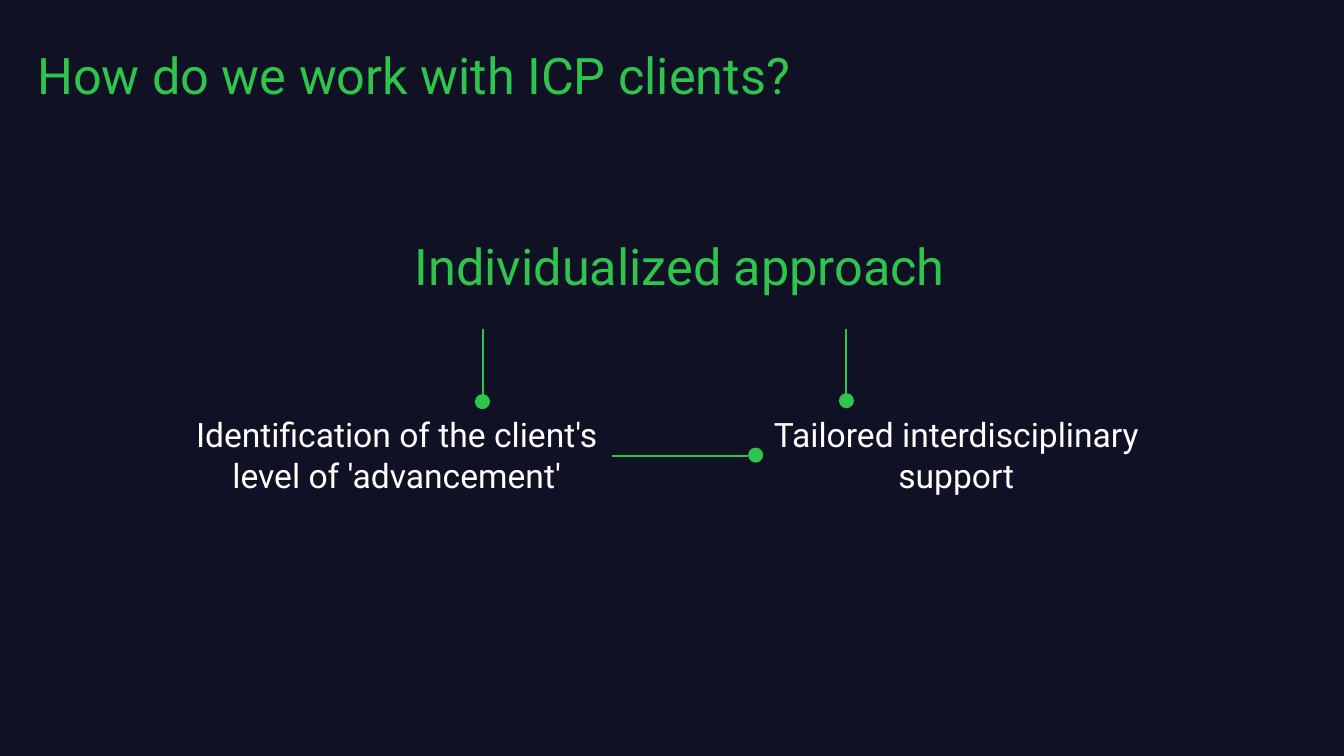
from lxml.etree import SubElement
from pptx import Presentation
from pptx.dml.color import RGBColor
from pptx.enum.shapes import MSO_CONNECTOR, MSO_SHAPE
from pptx.enum.text import MSO_ANCHOR, MSO_AUTO_SIZE, PP_ALIGN
from pptx.oxml.ns import qn
from pptx.util import Pt

PX = 9144  # 100 px to the inch
GREEN = "2FC54C"
WHITE = "FFFFFF"
DOT = 15


def rgb(color):
    return RGBColor.from_string(color)


def write(sp, text, size, color, align):
    tf = sp.text_frame
    tf.word_wrap = True
    tf.auto_size = MSO_AUTO_SIZE.SHAPE_TO_FIT_TEXT
    tf.vertical_anchor = MSO_ANCHOR.TOP
    p = tf.paragraphs[0]
    p.text = text
    p.alignment = align
    p.font.name = "Roboto"
    p.font.size = Pt(size)
    p.font.color.rgb = rgb(color)


prs = Presentation()
prs.slide_width, prs.slide_height = 1333 * PX, 750 * PX
s = prs.slides.add_slide(prs.slide_layouts[5])
s.background.fill.solid()
s.background.fill.fore_color.rgb = rgb("101124")

title = s.shapes.title
title.left, title.top, title.width, title.height = 27 * PX, 39 * PX, 1087 * PX, 71 * PX
write(title, "How do we work with ICP clients?", 36, GREEN, PP_ALIGN.LEFT)

texts = [
    ("Individualized approach", 291, 228, 767, 71, 36, GREEN),
    ("Identification of the client's level of 'advancement'", 170, 406, 447, 91, 24, WHITE),
    ("Tailored interdisciplinary support", 725, 406, 447, 91, 24, WHITE),
]
for text, x, y, w, h, size, color in texts:
    sp = s.shapes.add_textbox(x * PX, y * PX, w * PX, h * PX)
    write(sp, text, size, color, PP_ALIGN.CENTER)

# Line start, line end, top left of the dot
pins = [
    ((479, 326), (479, 401), (471, 391)),
    ((607, 452), (742, 452), (742, 444)),
    ((839, 326), (839, 401), (832, 390)),
]
for (x1, y1), (x2, y2), (dot_x, dot_y) in pins:
    line = s.shapes.add_connector(MSO_CONNECTOR.STRAIGHT, x1 * PX, y1 * PX, x2 * PX, y2 * PX)
    line.line.color.rgb = rgb(GREEN)
    line.line.width = Pt(1.5)
    SubElement(line.element.spPr, qn("a:effectLst"))

    dot = s.shapes.add_shape(MSO_SHAPE.OVAL, dot_x * PX, dot_y * PX, DOT * PX, DOT * PX)
    dot.shadow.inherit = False
    dot.fill.solid()
    dot.fill.fore_color.rgb = rgb(GREEN)
    dot.line.fill.background()

prs.save("out.pptx")
